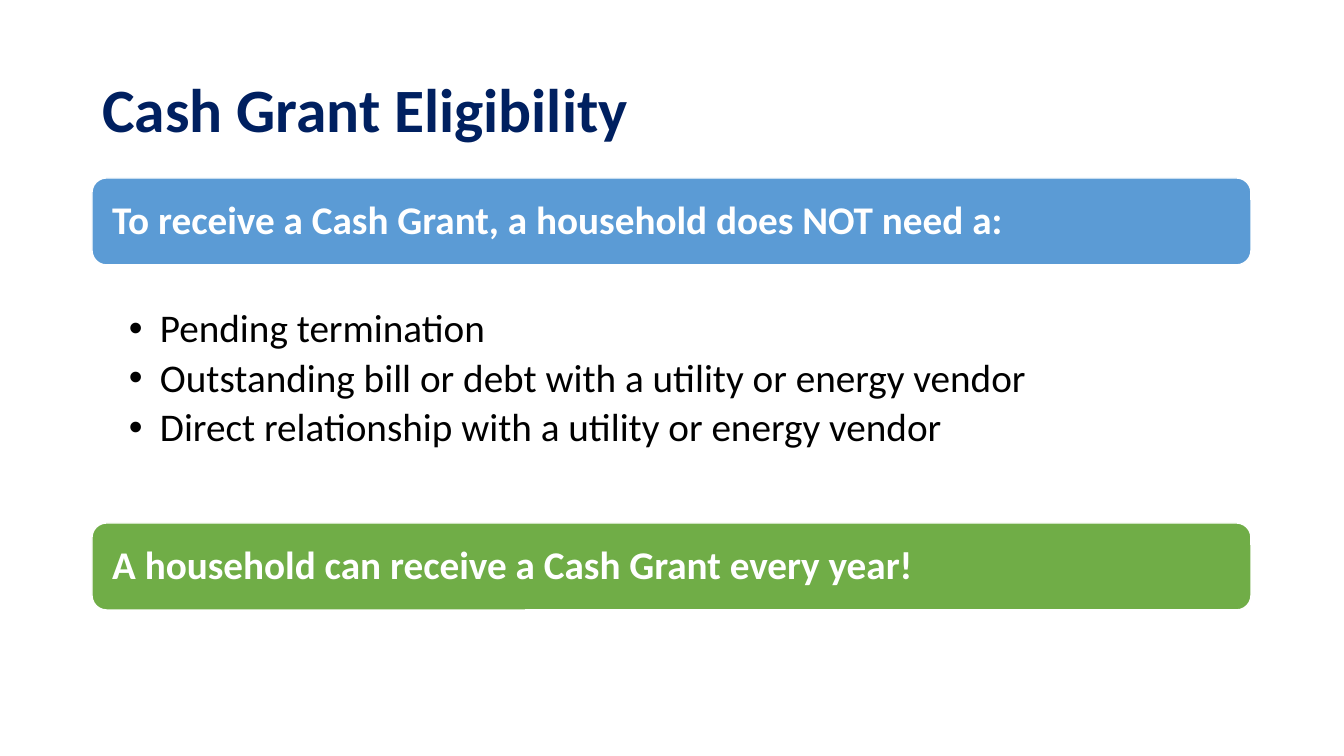
from pptx import Presentation
from pptx.dml.color import RGBColor
from pptx.enum.shapes import MSO_SHAPE
from pptx.enum.text import MSO_ANCHOR, MSO_AUTO_SIZE, PP_ALIGN
from pptx.util import Pt

COLORS = {"navy": "002060", "blue": "5B9BD5", "green": "70AD47",
          "white": "FFFFFF", "black": "000000"}
SCALE = 914400 / 100.8
LEFT, WIDTH, BAR = 92, 1159, 87


def px(n):
    return round(n * SCALE)


def color(name):
    return RGBColor.from_string(COLORS[name])


def apply(item, values):
    for key, value in values.items():
        setattr(item, key, value)


class Deck:
    face = "Calibri"

    def __init__(self, wide, high):
        self.prs = Presentation()
        apply(self.prs, {"slide_width": px(wide), "slide_height": px(high)})
        self.slide = self.prs.slides.add_slide(self.prs.slide_layouts[1])

    def place(self, shape, top, high):
        apply(shape, {"left": px(LEFT), "top": px(top),
                      "width": px(WIDTH), "height": px(high)})

    def label(self, shape, lines, size, tint, bold, frame, after=0):
        text = shape.text_frame
        text.text = "\n".join(lines)
        apply(text, {"word_wrap": True, "auto_size": MSO_AUTO_SIZE.NONE, **frame})
        for para in text.paragraphs:
            apply(para, {"alignment": PP_ALIGN.LEFT, "line_spacing": 0.9,
                         "space_before": Pt(0), "space_after": Pt(after)})
            for run in para.runs:
                apply(run.font, {"name": self.face, "size": Pt(size), "bold": bold})
                run.font.color.rgb = color(tint)

    def title(self, text, top, high):
        shape = self.slide.shapes.title
        self.place(shape, top, high)
        self.label(shape, [text], 44, "navy", True,
                   {"vertical_anchor": MSO_ANCHOR.MIDDLE})

    def bar(self, text, top, fill):
        shape = self.slide.shapes.add_shape(
            MSO_SHAPE.ROUNDED_RECTANGLE, px(LEFT), px(top), px(WIDTH), px(BAR))
        shape.shadow.inherit = False
        shape.fill.solid()
        shape.fill.fore_color.rgb = color(fill)
        shape.line.color.rgb = color("white")
        shape.line.width = Pt(1)
        self.label(shape, [text], 28, "white", True,
                   {"vertical_anchor": MSO_ANCHOR.MIDDLE,
                    "margin_left": px(16), "margin_right": px(16)})

    def bullets(self, lines, top, high):
        shape = self.slide.placeholders[1]
        self.place(shape, top, high)
        self.label(shape, lines, 28, "black", False,
                   {"vertical_anchor": MSO_ANCHOR.TOP,
                    "margin_left": px(37), "margin_right": px(19),
                    "margin_top": px(3), "margin_bottom": px(3)}, 5)
        for para in shape.text_frame.paragraphs:
            props = para._p.get_or_add_pPr()
            props.set("marL", str(px(31)))
            props.set("indent", str(px(-31)))

    def save(self):
        self.prs.save("out.pptx")


def main():
    deck = Deck(1344, 756)
    deck.title("Cash Grant Eligibility", 40, 146)
    deck.bar("To receive a Cash Grant, a household does NOT need a:", 178, "blue")
    deck.bullets(["Pending termination",
                  "Outstanding bill or debt with a utility or energy vendor",
                  "Direct relationship with a utility or energy vendor"], 306, 217)
    deck.bar("A household can receive a Cash Grant every year!", 523, "green")
    deck.save()


if __name__ == "__main__":
    main()
